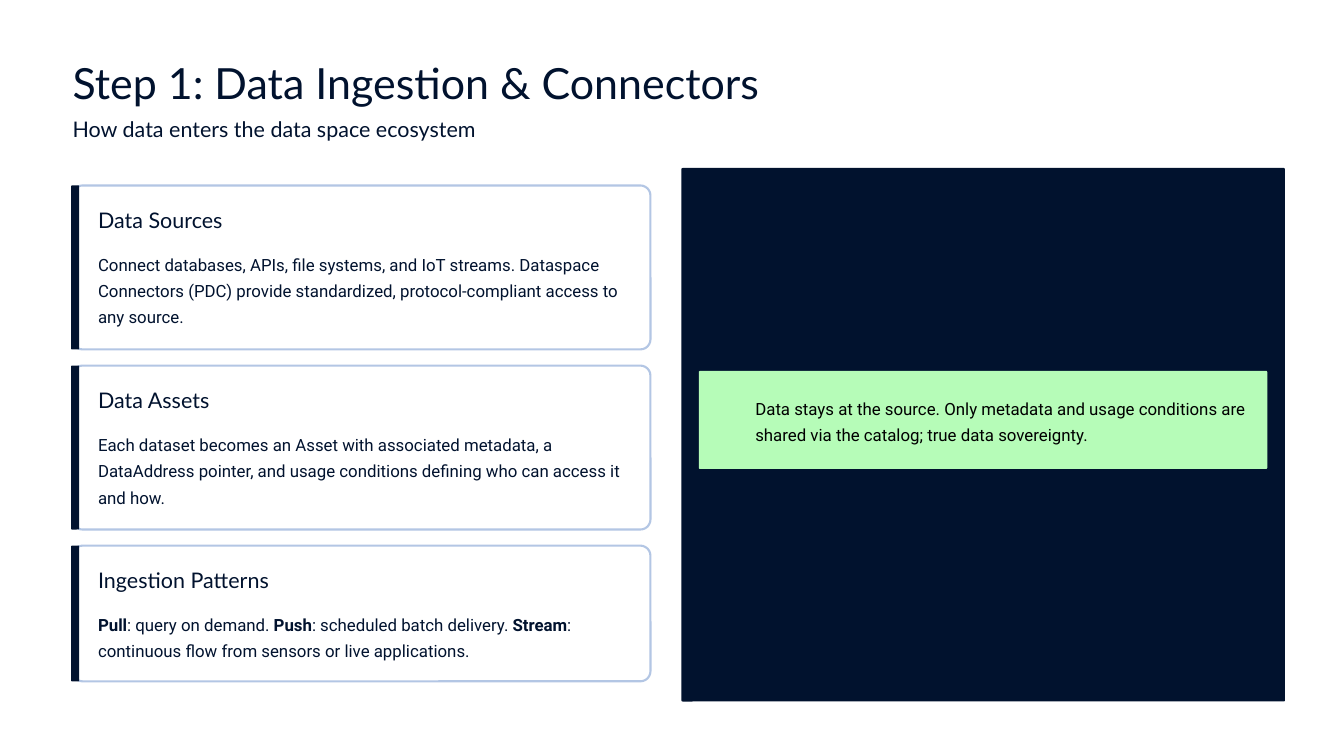
from pptx import Presentation
from pptx.dml.color import RGBColor
from pptx.enum.shapes import MSO_SHAPE
from pptx.util import Inches, Pt

ROUNDED = MSO_SHAPE.ROUNDED_RECTANGLE
COLORS = {"navy": "01122E", "white": "FFFFFF", "border": "B3C6E4",
          "green": "B6FCB8", "black": "000000"}

# Widescreen 16:9 slide
prs = Presentation()
prs.slide_width = Inches(10)
prs.slide_height = Inches(10 * 9 / 16)
slide = prs.slides.add_slide(prs.slide_layouts[6])
slide.background.fill.solid()
slide.background.fill.fore_color.rgb = RGBColor.from_string(COLORS["white"])


def add_text(runs, left, top, width, height, size=9, font="Roboto",
             color="navy", spacing=1.3):
    """Add a text box; runs is a string or a list of (text, bold) pairs."""
    frame = slide.shapes.add_textbox(
        Inches(left), Inches(top), Inches(width), Inches(height)).text_frame
    frame.word_wrap = True
    frame.margin_left = frame.margin_right = 0
    frame.margin_top = frame.margin_bottom = 0
    paragraph = frame.paragraphs[0]
    paragraph.line_spacing = spacing
    for text, bold in [(runs, False)] if isinstance(runs, str) else runs:
        run = paragraph.add_run()
        run.text = text
        run.font.size = Pt(size)
        run.font.name = font
        run.font.bold = bold
        run.font.color.rgb = RGBColor.from_string(COLORS[color])


def add_panel(left, top, width, height, fill, radius, border=None):
    """Add a rounded rectangle; radius is in inches."""
    panel = slide.shapes.add_shape(
        ROUNDED, Inches(left), Inches(top), Inches(width), Inches(height))
    panel.shadow.inherit = False
    panel.adjustments[0] = radius / min(width, height)
    panel.fill.solid()
    panel.fill.fore_color.rgb = RGBColor.from_string(COLORS[fill])
    if border:
        panel.line.color.rgb = RGBColor.from_string(COLORS[border])
        panel.line.width = Pt(1.12)
    else:
        panel.line.fill.background()


# Heading
heading = {"font": "Lato", "spacing": 1.04}
add_text("Step 1: Data Ingestion & Connectors", 0.54, 0.41, 5.84, 0.4,
         size=23, **heading)
add_text("How data enters the data space ecosystem", 0.54, 0.86, 3.79, 0.2,
         size=11.5, **heading)

# Cards: title, body, card height, body height
cards = [
    ("Data Sources",
     "Connect databases, APIs, file systems, and IoT streams. Dataspace "
     "Connectors (PDC) provide standardized, protocol-compliant access to "
     "any source.", 1.22, 0.6),
    ("Data Assets",
     "Each dataset becomes an Asset with associated metadata, a DataAddress "
     "pointer, and usage conditions defining who can access it and how.",
     1.22, 0.6),
    ("Ingestion Patterns",
     [("Pull", True), (": query on demand. ", False),
      ("Push", True), (": scheduled batch delivery. ", False),
      ("Stream", True),
      (": continuous flow from sensors or live applications.", False)],
     1.01, 0.4),
]
card_top = 1.38
card_gap = 0.12
for title, body, card_height, body_height in cards:
    add_panel(0.54, card_top, 4.3, card_height, "white", 0.075, border="border")
    add_panel(0.53, card_top, 0.06, card_height, "navy", 0.006)
    add_text(title, 0.73, card_top + 0.15, 1.61, 0.2, size=11.5, **heading)
    add_text(body, 0.73, card_top + 0.47, 3.96, body_height)
    card_top += card_height + card_gap

# Dark panel with the key message
add_panel(5.07, 1.25, 4.49, 3.97, "navy", 0.01)
add_panel(5.2, 2.76, 4.23, 0.73, "green", 0.01)
add_text("Data stays at the source. Only metadata and usage conditions are "
         "shared via the catalog; true data sovereignty.",
         5.62, 2.92, 3.68, 0.4, color="black")

prs.save("out.pptx")
